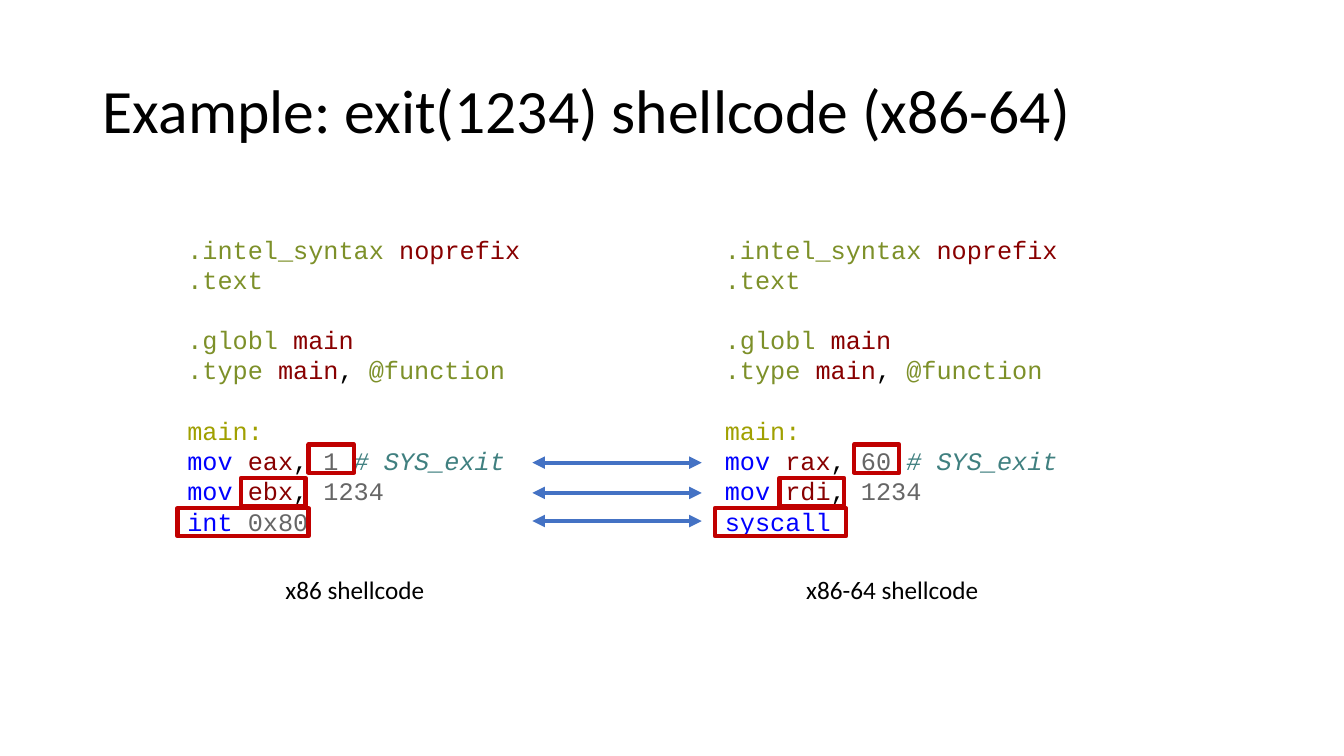
from dataclasses import dataclass

from lxml import etree
from pptx import Presentation
from pptx.dml.color import RGBColor
from pptx.enum.shapes import MSO_CONNECTOR, MSO_SHAPE
from pptx.enum.text import MSO_ANCHOR, PP_ALIGN
from pptx.oxml.ns import qn
from pptx.util import Inches, Pt

STRAIGHT = MSO_CONNECTOR.STRAIGHT
RECTANGLE = MSO_SHAPE.RECTANGLE
MIDDLE = MSO_ANCHOR.MIDDLE
LEFT, CENTER = PP_ALIGN.LEFT, PP_ALIGN.CENTER


@dataclass(frozen=True)
class Theme:
    """Colours, fonts and sizes of the slide."""
    ink: str = "000000"
    directive: str = "7D9029"
    name: str = "880000"
    label: str = "A0A000"
    keyword: str = "0000FF"
    number: str = "666666"
    comment: str = "408080"
    arrow: str = "4472C4"
    mark: str = "C00000"
    sans: str = "Calibri"
    mono: str = "Courier New"
    title_size: float = 44
    body_size: float = 18
    line_pitch: float = 21.6
    stroke: float = 3


@dataclass(frozen=True)
class Box:
    """A rectangle in inches."""
    left: float
    top: float
    width: float
    height: float


THEME = Theme()
COLUMN, ROW = 0.15, 0.3
CODE_TOP, CODE_WIDTH, CODE_HEIGHT = 2.25, 3.52, 3.13
OLD_BOX, NEW_BOX = (Box(left, CODE_TOP, CODE_WIDTH, CODE_HEIGHT) for left in (1.76, 7.09))
TITLE_BOX = Box(0.92, 0.4, 11.5, 1.45)
MARK_ROWS = (7.2, 8.3, 9.3)
ARROW_ROWS = (7.8, 8.8, 9.73)
MARK_HEIGHT = 0.93
CAPTION_ROW = 11.33

HEADER_BLOCKS = [
    [[(".intel_syntax ", "directive"), ("noprefix", "name")], [(".text", "directive")]],
    [[(".globl ", "directive"), ("main", "name")],
     [(".type ", "directive"), ("main", "name"), (", ", "ink"), ("@function", "directive")]],
]


def main_block(number_register, number, value_register, call):
    """Return the lines of the main routine as coloured spans."""
    return [
        [("main:", "label")],
        [("mov ", "keyword"), (number_register, "name"), (", ", "ink"),
         (number + " ", "number"), ("# SYS_exit", "comment")],
        [("mov ", "keyword"), (value_register, "name"), (", ", "ink"), ("1234", "number")],
        call,
    ]


def add_span(para, text, *, font=THEME.sans, size=THEME.body_size, color=THEME.ink, italic=False):
    """Append formatted text to a paragraph."""
    span = para.add_run()
    span.text = text
    span.font.name = font
    span.font.size = Pt(size)
    span.font.italic = italic
    span.font.color.rgb = RGBColor.from_string(color)


def inches(box):
    """Return the four lengths of a box."""
    return [Inches(length) for length in (box.left, box.top, box.width, box.height)]


def add_title(page, box, text):
    """Place and fill the title placeholder."""
    title = page.shapes.title
    title.left, title.top, title.width, title.height = inches(box)
    title.text_frame.vertical_anchor = MIDDLE
    para = title.text_frame.paragraphs[0]
    para.alignment = LEFT
    para.line_spacing = 0.9
    add_span(para, text, size=THEME.title_size)


def add_code(page, box, blocks):
    """Write code blocks, one line of space apart."""
    frame = page.shapes.add_textbox(*inches(box)).text_frame
    frame.word_wrap = True
    frame.margin_top = Inches(0.07)
    for block_index, block in enumerate(blocks):
        for line_index, line in enumerate(block):
            first = block_index == line_index == 0
            para = frame.paragraphs[0] if first else frame.add_paragraph()
            para.line_spacing = Pt(THEME.line_pitch)
            if block_index and not line_index:
                para.space_before = Pt(THEME.line_pitch)
            for text, role in line:
                add_span(para, text, font=THEME.mono, color=getattr(THEME, role),
                         italic=role == "comment")


def add_caption(page, box, text):
    """Centre a caption below a code box."""
    place = Box(box.left, box.top + CAPTION_ROW * ROW, box.width, 0.4)
    frame = page.shapes.add_textbox(*inches(place)).text_frame
    frame.word_wrap = True
    para = frame.paragraphs[0]
    para.alignment = CENTER
    add_span(para, text)


def add_marks(page, box, spans):
    """Frame the differing operands, given as start column and width."""
    for row, (column, width) in zip(MARK_ROWS, spans):
        place = Box(box.left + column * COLUMN, box.top + row * ROW,
                    width * COLUMN, MARK_HEIGHT * ROW)
        mark = page.shapes.add_shape(RECTANGLE, *inches(place))
        mark.shadow.inherit = False
        mark.fill.background()
        mark.line.color.rgb = RGBColor.from_string(THEME.mark)
        mark.line.width = Pt(THEME.stroke)


def add_arrows(page, box):
    """Draw double arrows across the gap between the code boxes."""
    for row in ARROW_ROWS:
        height = Inches(box.top + row * ROW)
        arrow = page.shapes.add_connector(
            STRAIGHT, Inches(box.left), height, Inches(box.left + box.width), height)
        arrow.line.color.rgb = RGBColor.from_string(THEME.arrow)
        arrow.line.width = Pt(THEME.stroke)
        for end in ("a:headEnd", "a:tailEnd"):
            etree.SubElement(arrow.line._get_or_add_ln(), qn(end), type="triangle")
        etree.SubElement(arrow._element.spPr, qn("a:effectLst"))


def add_panel(page, box, routine, caption, marks):
    """Build one listing with its caption and marks."""
    add_code(page, box, HEADER_BLOCKS + [routine])
    add_caption(page, box, caption)
    add_marks(page, box, marks)


def main():
    """Build and save the deck."""
    deck = Presentation()
    deck.slide_width, deck.slide_height = Inches(13.33), Inches(7.5)
    page = deck.slides.add_slide(deck.slide_layouts[5])
    add_title(page, TITLE_BOX, "Example: exit(1234) shellcode (x86-64)")
    add_panel(page, OLD_BOX,
              main_block("eax", "1", "ebx", [("int ", "keyword"), ("0x80", "number")]),
              "x86 shellcode", [(8.67, 3), (4.2, 4.27), (0, 8.67)])
    add_panel(page, NEW_BOX,
              main_block("rax", "60", "rdi", [("syscall", "keyword")]),
              "x86-64 shellcode", [(9.2, 3), (4.27, 4.27), (0, 8.67)])
    gap_left = OLD_BOX.left + OLD_BOX.width
    add_arrows(page, Box(gap_left, CODE_TOP, 11.2 * COLUMN, CODE_HEIGHT))
    deck.save("out.pptx")


if __name__ == "__main__":
    main()
